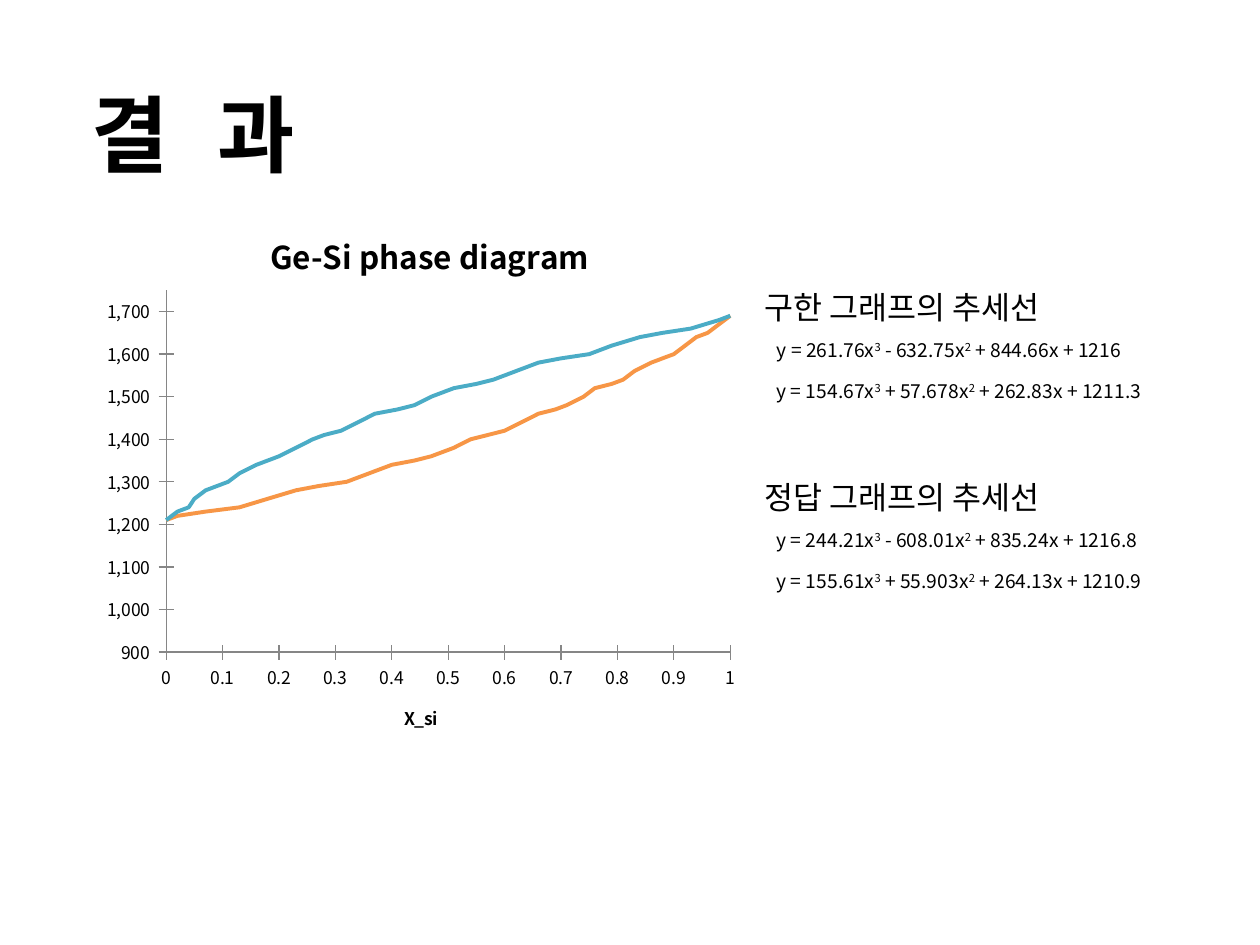
import lxml.etree
import pptx
import pptx.chart.data
import pptx.dml.color
import pptx.enum.chart
import pptx.enum.text
import pptx.oxml.ns
import pptx.util

PX = 914400 / 126
qn = pptx.oxml.ns.qn


class Theme:
    font = "Noto Sans CJK KR"
    ink = pptx.dml.color.RGBColor(0, 0, 0)
    axis = pptx.dml.color.RGBColor(0x86, 0x86, 0x86)
    upper = pptx.dml.color.RGBColor(0x4B, 0xAC, 0xC6)
    lower = pptx.dml.color.RGBColor(0xF7, 0x96, 0x46)
    title, head, body, small = 48, 18, 11, 10


TEMPS = [1210, 1220, 1230, 1240, 1260, 1280, 1290, 1300, 1320, 1340, 1350, 1360,
         1380, 1400, 1410, 1420, 1440, 1460, 1470, 1480, 1500, 1520, 1530, 1540,
         1560, 1580, 1590, 1600, 1620, 1640, 1650, 1660, 1680, 1690]
UPPER = [0, 0.01, 0.02, 0.04, 0.05, 0.07, 0.09, 0.11, 0.13, 0.16, 0.18, 0.2,
         0.23, 0.26, 0.28, 0.31, 0.34, 0.37, 0.41, 0.44, 0.47, 0.51, 0.55, 0.58,
         0.62, 0.66, 0.7, 0.75, 0.79, 0.84, 0.88, 0.93, 0.98, 1]
LOWER = [0, 0.02, 0.07, 0.13, 0.18, 0.23, 0.27, 0.32, 0.36, 0.4, 0.44, 0.47,
         0.51, 0.54, 0.57, 0.6, 0.63, 0.66, 0.69, 0.71, 0.74, 0.76, 0.79, 0.81,
         0.83, 0.86, 0.88, 0.9, 0.92, 0.94, 0.96, 0.97, 0.99, 1]
CURVES = [("Series 1", UPPER, Theme.upper), ("Series 2", LOWER, Theme.lower)]

# Each equation: box width, then its text; ^ marks a raised digit.
FOUND = [(394, "y = 261.76x^3 - 632.75x^2 + 844.66x + 1216"),
         (414, "y = 154.67x^3 + 57.678x^2 + 262.83x + 1211.3")]
ANSWER = [(410, "y = 244.21x^3 - 608.01x^2 + 835.24x + 1216.8"),
          (414, "y = 155.61x^3 + 55.903x^2 + 264.13x + 1210.9")]


def emu(*sizes):
    return [round(size * PX) for size in sizes]


def style(font, size, bold=False):
    font.name = Theme.font
    font.size = pptx.util.Pt(size)
    font.bold = bold
    font.color.rgb = Theme.ink


def add_run(para, text, size, bold=False, raised=False):
    run = para.add_run()
    run.text = text
    style(run.font, size, bold)
    props = run.font._element
    if raised:
        props.set("baseline", "30000")
    lxml.etree.SubElement(props, qn("a:ea")).set("typeface", Theme.font)


def add_text(shapes, box, wrap=False, centre=True):
    """Add an empty text box and return its first paragraph."""
    frame = shapes.add_textbox(*emu(*box)).text_frame
    frame.word_wrap = wrap
    frame.auto_size = pptx.enum.text.MSO_AUTO_SIZE.SHAPE_TO_FIT_TEXT
    para = frame.paragraphs[0]
    if centre:
        para.alignment = pptx.enum.text.PP_ALIGN.CENTER
    return para


def add_title(slide, box):
    add_run(add_text(slide.shapes, box, wrap=True), "결\t과", Theme.title, bold=True)


def add_trends(slide, box, head, lines):
    """Group a heading with its equations, stacked below it."""
    left, top, width, height = box
    shapes = slide.shapes.add_group_shape().shapes
    para = add_text(shapes, (left, top, width, height), centre=False)
    add_run(para, head, Theme.head)
    for row, (span, text) in enumerate(lines):
        para = add_text(shapes, (left, top + height + 41 * row, span, 37))
        first, *rest = text.split("^")
        add_run(para, first, Theme.body)
        for part in rest:
            add_run(para, part[0], Theme.body, raised=True)
            add_run(para, part[1:], Theme.body)


def pin(node, index, **parts):
    """Give a chart part a manual layout, as fractions of the chart."""
    old = node.find(qn("c:layout"))
    if old is not None:
        node.remove(old)
    layout = lxml.etree.Element(qn("c:layout"))
    node.insert(index, layout)
    manual = lxml.etree.SubElement(layout, qn("c:manualLayout"))
    if "w" in parts:
        lxml.etree.SubElement(manual, qn("c:layoutTarget")).set("val", "inner")
    for key in ("x", "y"):
        lxml.etree.SubElement(manual, qn(f"c:{key}Mode")).set("val", "edge")
    for key, value in parts.items():
        lxml.etree.SubElement(manual, qn(f"c:{key}")).set("val", str(value))


def set_axis(axis, low, high, step, form):
    axis.minimum_scale, axis.maximum_scale, axis.major_unit = low, high, step
    axis.has_major_gridlines = False
    axis.major_tick_mark = pptx.enum.chart.XL_TICK_MARK.CROSS
    axis.minor_tick_mark = pptx.enum.chart.XL_TICK_MARK.NONE
    axis.tick_labels.number_format = form
    axis.tick_labels.number_format_is_linked = False
    axis.format.line.color.rgb = Theme.axis
    axis.format.line.width = pptx.util.Pt(0.75)
    style(axis.tick_labels.font, Theme.small)


def add_phases(slide, box):
    data = pptx.chart.data.XyChartData()
    for name, xs, _ in CURVES:
        series = data.add_series(name)
        for x, temp in zip(xs, TEMPS):
            series.add_data_point(x, temp)
    kind = pptx.enum.chart.XL_CHART_TYPE.XY_SCATTER_SMOOTH_NO_MARKERS
    chart = slide.shapes.add_chart(kind, *emu(*box), data).chart
    style(chart.font, Theme.small)
    chart.has_legend = False
    chart.plots[0].vary_by_categories = False
    for series, (_, _, color) in zip(chart.plots[0].series, CURVES):
        series.marker.style = pptx.enum.chart.XL_MARKER_STYLE.NONE
        series.format.line.color.rgb = color
        series.format.line.width = pptx.util.Pt(2.25)

    set_axis(chart.category_axis, 0, 1, 0.1, "General")
    set_axis(chart.value_axis, 900, 1750, 100, r"#,##0_);[Red]\(#,##0\)")
    label = chart.category_axis.axis_title.text_frame.paragraphs[0]
    add_run(label, "X_si", Theme.small, bold=True)

    chart.has_title = True
    title = chart.chart_title
    add_run(title.text_frame.paragraphs[0], "Ge-Si phase diagram", Theme.head, bold=True)
    pin(title._element, 1, x=0.26, y=0.05)
    title._element.find(qn("c:overlay")).set("val", "1")
    area = chart._chartSpace.find(".//" + qn("c:plotArea"))
    pin(area, 0, x=0.11, y=0.17, w=0.86, h=0.645)


def main():
    deck = pptx.Presentation()
    deck.slide_width, deck.slide_height = emu(1260, 945)
    slide = deck.slides.add_slide(deck.slide_layouts[6])
    add_title(slide, (74, 76, 238, 115))
    add_phases(slide, (94, 195, 656, 561))
    add_trends(slide, (752, 282, 334, 50), "구한 그래프의 추세선", FOUND)
    add_trends(slide, (752, 472, 334, 50), "정답 그래프의 추세선", ANSWER)
    deck.save("out.pptx")


if __name__ == "__main__":
    main()
